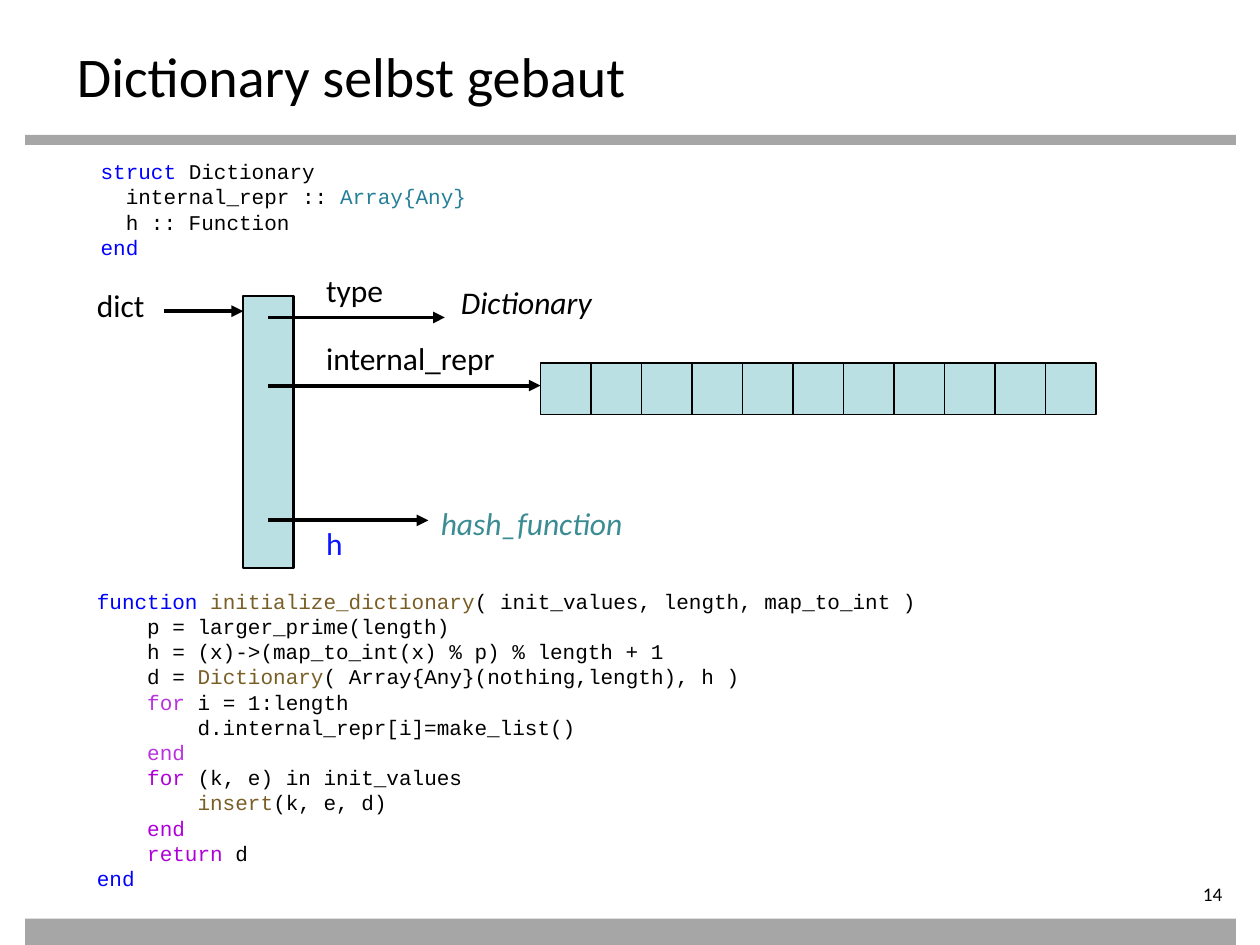
from lxml import etree
from pptx import Presentation
from pptx.dml.color import RGBColor
from pptx.enum.shapes import MSO_CONNECTOR, MSO_SHAPE
from pptx.enum.text import MSO_ANCHOR, PP_ALIGN
from pptx.oxml.ns import qn
from pptx.util import Inches, Pt

RECT = MSO_SHAPE.RECTANGLE
STRAIGHT = MSO_CONNECTOR.STRAIGHT
TOP = MSO_ANCHOR.TOP
LEFT, RIGHT = PP_ALIGN.LEFT, PP_ALIGN.RIGHT

COLORS = {
    "black": "000000", "band": "A6A6A6", "cell": "BBE0E3",
    "keyword": "0000FF", "name": "795E26", "type": "267F99",
    "loop": "B932E0", "flow": "AF00DB", "field": "0D15FF", "hash": "3C8C93",
}
BODY, MONO = "Calibri", "Courier New"
WIDTH, HEIGHT = 10, 7.5

TITLE = "Dictionary selbst gebaut"
PAGE = "14"
STRUCT = [
    [("struct", "keyword"), (" Dictionary", "black")],
    [("  internal_repr :: ", "black"), ("Array{Any}", "type")],
    [("  h :: Function", "black")],
    [("end", "keyword")],
]
FUNCTION = [
    [("function ", "keyword"), ("initialize_dictionary", "name"),
     ("( init_values, length, map_to_int )", "black")],
    [("    p = larger_prime(length)", "black")],
    [("    h = (x)->(map_to_int(x) % p) % length + 1", "black")],
    [("    d = ", "black"), ("Dictionary", "name"),
     ("( Array{Any}(nothing,length), h )", "black")],
    [("    for ", "loop"), ("i = 1:length", "black")],
    [("        d.internal_repr[i]=make_list()", "black")],
    [("    end", "loop")],
    [("    for", "flow"), (" (k, e) in init_values", "black")],
    [("        insert", "name"), ("(k, e, d)", "black")],
    [("    end", "flow")],
    [("    return", "flow"), (" d", "black")],
    [("end", "keyword")],
]
FIELD_X = 2.49
LABELS = [
    ("dict", 0.67, 2.22, 0.6, "black", False),
    ("type", FIELD_X, 2.1, 0.68, "black", False),
    ("Dictionary", 3.56, 2.2, 1.29, "black", True),
    ("internal_repr", FIELD_X, 2.64, 1.57, "black", False),
    ("h", FIELD_X, 4.11, 0.34, "field", False),
    ("hash_function", 3.4, 3.95, 1.68, "hash", True),
]
RECORD = (1.93, 2.35, 0.4, 2.16)
RECORD_MID = RECORD[0] + RECORD[2] / 2
ARRAY_X, ARRAY_Y, ARRAY_W, ARRAY_H, SLOTS = 4.29, 2.88, 4.41, 0.41, 11
ARROWS = [
    (1.3, RECORD[0], 2.47),
    (RECORD_MID, 3.53, 2.52),
    (RECORD_MID, ARRAY_X, 3.06),
    (RECORD_MID, 3.4, 4.13),
]
MARGIN = 0.02 * WIDTH
BANDS = [(1.07, 0.08), (7.29, HEIGHT - 7.29)]


def color(key):
    return RGBColor.from_string(COLORS[key])


def add_run(paragraph, text, size, key, font=BODY, italic=False):
    run = paragraph.add_run()
    run.text = text
    run.font.name = font
    run.font.size = Pt(size)
    run.font.italic = italic
    run.font.color.rgb = color(key)


def add_rect(shapes, box, fill, line_width=None):
    rect = shapes.add_shape(RECT, *map(Inches, box))
    rect.shadow.inherit = False
    rect.fill.solid()
    rect.fill.fore_color.rgb = color(fill)
    if line_width:
        rect.line.color.rgb = color("black")
        rect.line.width = Pt(line_width)
    else:
        rect.line.fill.background()


def add_text(slide, box, wrap=True):
    frame = slide.shapes.add_textbox(*map(Inches, box)).text_frame
    frame.word_wrap = wrap
    return frame


def add_code(slide, box, lines):
    frame = add_text(slide, box)
    for number, line in enumerate(lines):
        paragraph = frame.add_paragraph() if number else frame.paragraphs[0]
        paragraph.line_spacing = Pt(14.4)
        for text, key in line:
            add_run(paragraph, text, 12, key, MONO)


def add_arrow(slide, start, end, y):
    arrow = slide.shapes.add_connector(
        STRAIGHT, Inches(start), Inches(y), Inches(end), Inches(y))
    arrow.line.color.rgb = color("black")
    arrow.line.width = Pt(2.25)
    etree.SubElement(arrow.line._get_or_add_ln(), qn("a:tailEnd"), type="triangle")
    etree.SubElement(arrow._element.spPr, qn("a:effectLst"))


def main():
    deck = Presentation()
    deck.slide_width, deck.slide_height = Inches(WIDTH), Inches(HEIGHT)
    slide = deck.slides.add_slide(deck.slide_layouts[5])

    for top, height in BANDS:
        add_rect(slide.shapes, (MARGIN, top, 0.961 * WIDTH, height), "band")

    title = slide.shapes.title
    title.left, title.top, title.width, title.height = map(Inches, (0.51, 0.28, 9, 0.55))
    title.text_frame.vertical_anchor = TOP
    heading = title.text_frame.paragraphs[0]
    heading.alignment = LEFT
    add_run(heading, TITLE, 32, "black")

    page = add_text(slide, (8.7, 7, 1.1, 0.22))
    page.margin_left = page.margin_top = page.margin_bottom = 0
    page.paragraphs[0].alignment = RIGHT
    add_run(page.paragraphs[0], PAGE, 11, "black")

    add_rect(slide.shapes, RECORD, "cell", 1.5)
    array = slide.shapes.add_group_shape()
    slot_width = ARRAY_W / SLOTS
    for slot in range(SLOTS):
        box = (ARRAY_X + slot * slot_width, ARRAY_Y, slot_width, ARRAY_H)
        add_rect(array.shapes, box, "cell", 0.75)

    for arrow in ARROWS:
        add_arrow(slide, *arrow)
    for text, left, top, width, key, italic in LABELS:
        label = add_text(slide, (left, top, width, 0.4), wrap=False)
        add_run(label.paragraphs[0], text, 18, key, italic=italic)

    add_code(slide, (0.7, 1.21, 4.58, 0.91), STRUCT)
    add_code(slide, (0.67, 4.62, 9.22, 2.52), FUNCTION)
    deck.save("out.pptx")


if __name__ == "__main__":
    main()
